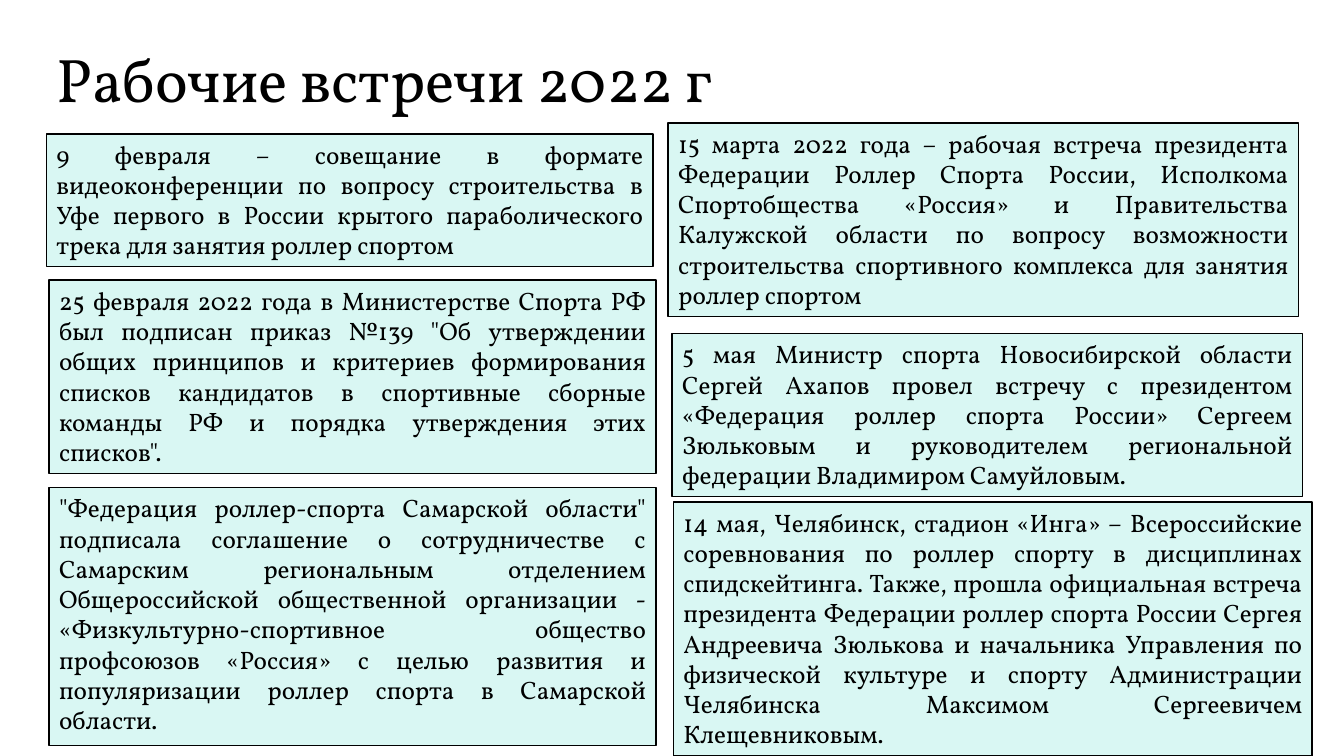
from pptx import Presentation
from pptx.dml.color import RGBColor as Rgb
from pptx.enum.shapes import MSO_SHAPE as Shape
from pptx.enum.text import MSO_ANCHOR as Anchor, MSO_AUTO_SIZE as Fit, PP_ALIGN as Align
from pptx.util import Cm, Pt

COLORS = {"ink": "000000", "mint": "D9F7F3"}
FONT = "Vollkorn"

# Each column: (left, top, width, height) in cm, then the text of the card
LEFT = [
    ((1.17, 3.38, 15.29, 3.33),
     "9 февраля – совещание в формате видеоконференции по вопросу "
     "строительства в Уфе первого в России крытого параболического "
     "трека для занятия роллер спортом"),
    ((1.24, 7.06, 15.29, 4.88),
     "25 февраля 2022 года в Министерстве Спорта РФ был подписан приказ "
     "№139 \"Об утверждении общих принципов и критериев формирования "
     "списков кандидатов в спортивные сборные команды РФ и порядка "
     "утверждения этих списков\"."),
    ((1.24, 12.29, 15.29, 6.5),
     "\"Федерация роллер-спорта Самарской области\" подписала соглашение "
     "о сотрудничестве с Самарским региональным отделением "
     "Общероссийской общественной организации - "
     "«Физкультурно-спортивное общество профсоюзов «Россия» с целью "
     "развития и популяризации роллер спорта в Самарской области."),
]
RIGHT = [
    ((16.84, 3.1, 15.88, 4.88),
     "15 марта 2022 года – рабочая встреча президента Федерации Роллер "
     "Спорта России, Исполкома Спортобщества «Россия» и Правительства "
     "Калужской области по вопросу возможности строительства "
     "спортивного комплекса для занятия роллер спортом"),
    ((16.94, 8.41, 15.88, 4.11),
     "5 мая Министр спорта Новосибирской области Сергей Ахапов провел "
     "встречу с президентом «Федерация роллер спорта России» Сергеем "
     "Зюльковым и руководителем региональной федерации Владимиром "
     "Самуйловым."),
    ((16.97, 12.65, 16.1, 6.4),
     "14 мая, Челябинск, стадион «Инга» – Всероссийские соревнования по "
     "роллер спорту в дисциплинах спидскейтинга. Также, прошла "
     "официальная встреча президента Федерации роллер спорта России "
     "Сергея Андреевича Зюлькова и начальника Управления по физической "
     "культуре и спорту Администрации Челябинска Максимом Сергеевичем "
     "Клещевниковым."),
]


def color(name):
    return Rgb.from_string(COLORS[name])


def write(shape, text, size, anchor, align):
    """Put one styled run into the shape and return its paragraph."""
    frame = shape.text_frame
    frame.word_wrap = True
    frame.vertical_anchor = anchor
    para = frame.paragraphs[0]
    para.alignment = align
    run = para.add_run()
    run.text = text
    run.font.name = FONT
    run.font.size = Pt(size)
    run.font.color.rgb = color("ink")
    return para


def add_title(slide, box, text):
    shape = slide.shapes.add_textbox(*map(Cm, box))
    para = write(shape, text, 44, Anchor.MIDDLE, Align.LEFT)
    para.line_spacing = 0.9


def add_card(slide, box, text):
    card = slide.shapes.add_shape(Shape.RECTANGLE, *map(Cm, box))
    card.shadow.inherit = False
    card.fill.solid()
    card.fill.fore_color.rgb = color("mint")
    card.line.color.rgb = color("ink")
    card.line.width = Pt(1)
    write(card, text, 18, Anchor.TOP, Align.JUSTIFY)
    card.text_frame.auto_size = Fit.SHAPE_TO_FIT_TEXT


def main():
    deck = Presentation()
    deck.slide_width, deck.slide_height = Cm(33.87), Cm(19.05)
    slide = deck.slides.add_slide(deck.slide_layouts[6])
    add_title(slide, (1.17, 0.25, 29.21, 3.68), "Рабочие встречи 2022 г")
    for box, text in LEFT + RIGHT:
        add_card(slide, box, text)
    deck.save("out.pptx")


if __name__ == "__main__":
    main()
